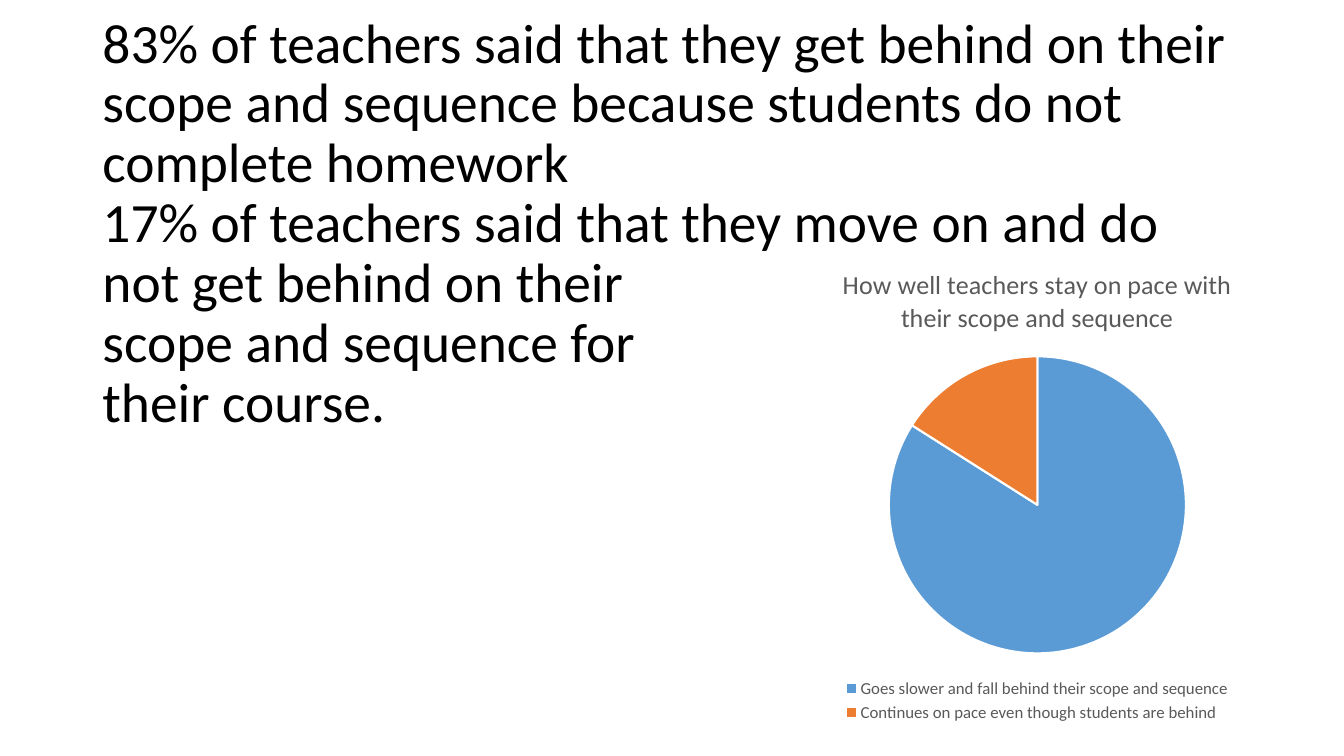
from dataclasses import dataclass

from pptx import Presentation
from pptx.chart.data import CategoryChartData
from pptx.dml.color import RGBColor
from pptx.enum.chart import XL_CHART_TYPE, XL_LEGEND_POSITION
from pptx.enum.text import MSO_ANCHOR, MSO_AUTO_SIZE, PP_ALIGN
from pptx.util import Emu, Pt

PIE = XL_CHART_TYPE.PIE
BOTTOM = XL_LEGEND_POSITION.BOTTOM
MIDDLE = MSO_ANCHOR.MIDDLE
NO_AUTOFIT = MSO_AUTO_SIZE.NONE
LEFT = PP_ALIGN.LEFT

BLACK = RGBColor(0x00, 0x00, 0x00)
WHITE = RGBColor(0xFF, 0xFF, 0xFF)
GRAY = RGBColor(0x59, 0x59, 0x59)
BLUE = RGBColor(0x5B, 0x9B, 0xD5)
ORANGE = RGBColor(0xED, 0x7D, 0x31)

FONT = "Calibri"
EMU_PER_PX = 9525
TITLE_ONLY = 5


@dataclass(frozen=True)
class Slice:
    label: str
    value: int
    color: RGBColor


HEADLINE = [
    "83% of teachers said that they get behind on their scope and sequence "
    "because students do not complete homework",
    "17% of teachers said that they move on and do not get behind on their",
    "scope and sequence for",
    "their course.",
]
CHART_TITLE = "How well teachers stay on pace with their scope and sequence"
SLICES = [
    Slice("Goes slower and fall behind their scope and sequence", 84, BLUE),
    Slice("Continues on pace even though students are behind", 16, ORANGE),
]


def px(length: int) -> Emu:
    return Emu(length * EMU_PER_PX)


def set_font(font, size: float, color: RGBColor) -> None:
    font.name = FONT
    font.size = Pt(size)
    font.bold = False
    font.color.rgb = color


def write_lines(para, lines: list[str], *, size: float, color: RGBColor) -> None:
    for index, line in enumerate(lines):
        if index:
            para.add_line_break()
        span = para.add_run()
        span.text = line
        set_font(span.font, size, color)


def add_headline(page) -> None:
    box = page.shapes.title
    box.left, box.top, box.width, box.height = px(88), px(20), px(1104), px(388)
    frame = box.text_frame
    frame.word_wrap = True
    frame.auto_size = NO_AUTOFIT
    frame.vertical_anchor = MIDDLE
    para = frame.paragraphs[0]
    para.alignment = LEFT
    para.line_spacing = 0.9
    para.space_before = Pt(0)
    write_lines(para, HEADLINE, size=39.6, color=BLACK)
    set_font(para.font, 39.6, BLACK)


def add_pace_chart(page) -> None:
    data = CategoryChartData()
    data.categories = [part.label for part in SLICES]
    data.add_series(CHART_TITLE, [part.value for part in SLICES])
    chart = page.shapes.add_chart(
        PIE, px(724), px(235), px(528), px(457), data
    ).chart
    set_font(chart.font, 10, BLACK)

    chart.has_title = True
    write_lines(
        chart.chart_title.text_frame.paragraphs[0],
        [CHART_TITLE],
        size=18.6,
        color=GRAY,
    )
    chart.chart_title.include_in_layout = False

    chart.has_legend = True
    chart.legend.position = BOTTOM
    chart.legend.include_in_layout = False
    set_font(chart.legend.font, 12, GRAY)

    plot = chart.plots[0]
    plot.vary_by_categories = True
    for index, part in enumerate(SLICES):
        wedge = plot.series[0].points[index].format
        wedge.fill.solid()
        wedge.fill.fore_color.rgb = part.color
        wedge.line.color.rgb = WHITE
        wedge.line.width = Pt(1.5)


def main() -> None:
    deck = Presentation()
    deck.slide_width, deck.slide_height = px(1280), px(720)
    page = deck.slides.add_slide(deck.slide_layouts[TITLE_ONLY])
    add_headline(page)
    add_pace_chart(page)
    deck.save("out.pptx")


if __name__ == "__main__":
    main()
